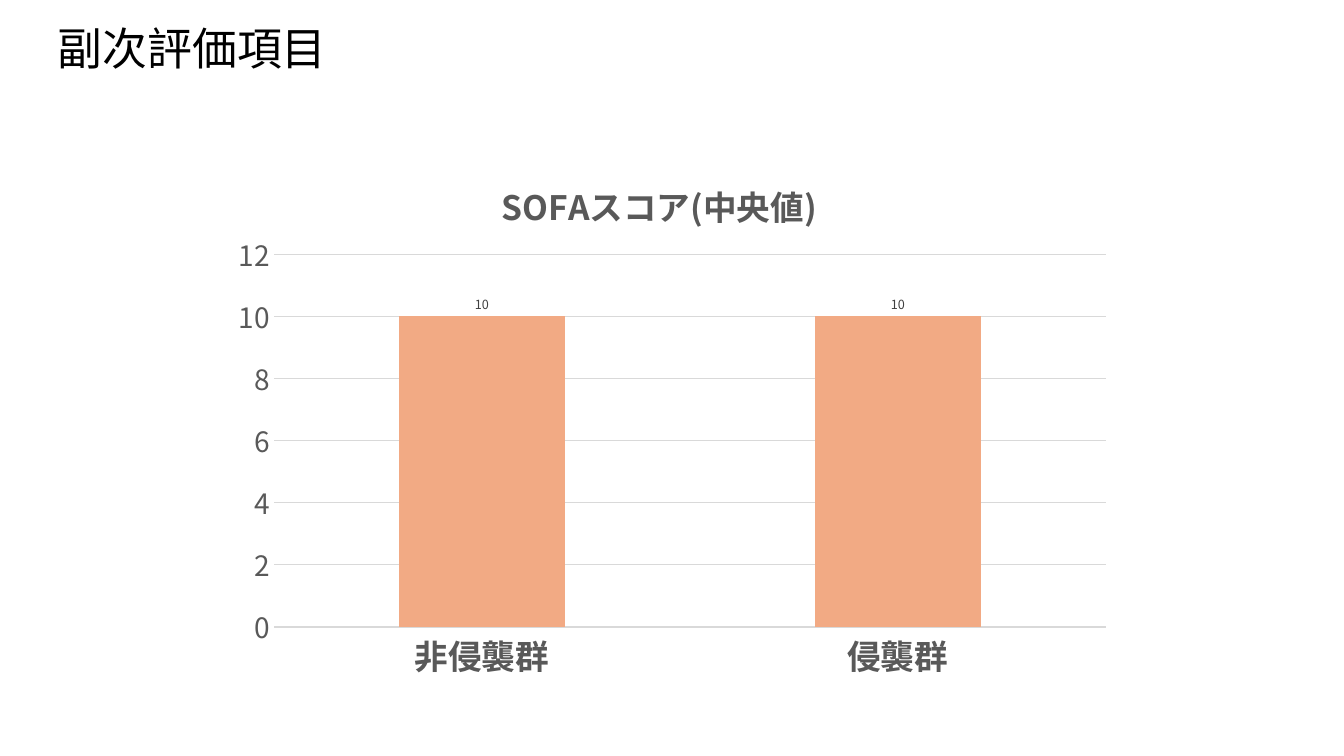
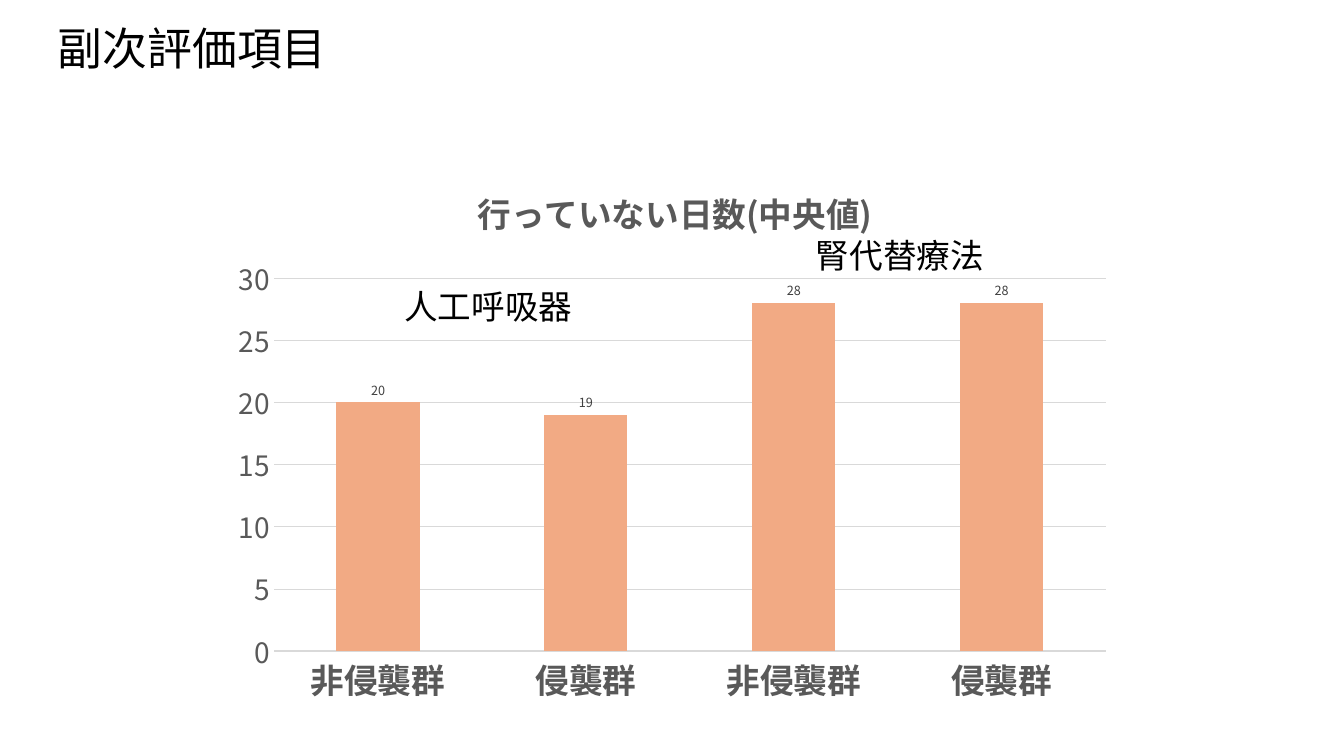
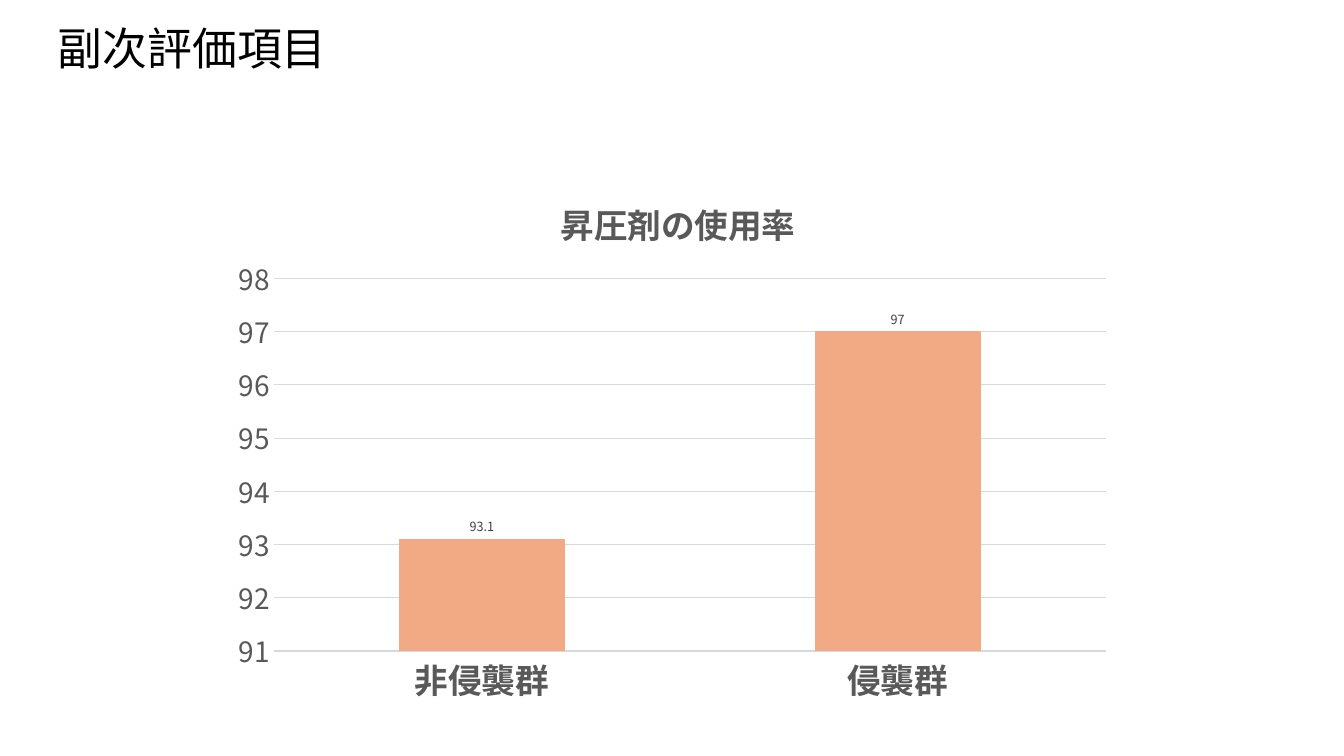
from dataclasses import dataclass

import pptx
import pptx.chart.data
import pptx.dml.color
import pptx.enum.chart
import pptx.enum.text
import pptx.oxml
import pptx.oxml.ns
import pptx.util

EMU_PER_PX = 9525
SLIDE_W, SLIDE_H = 1280, 720
HEADING_H = 91
HEADING_INDENT = 55
TEXT_INSET = 10
# Inner plot area shared by every chart; only its top varies
PLOT_LEFT, PLOT_W, PLOT_H = 261, 798, 355


@dataclass(frozen=True)
class Theme:
    font: str = "Noto Sans CJK JP"
    text: str = "000000"
    muted: str = "595959"
    value: str = "404040"
    bar: str = "F2AA84"
    grid: str = "D9D9D9"
    heading_size: int = 32
    label_size: int = 24
    scale_size: int = 20
    base_size: int = 10
    value_size: int = 9
    axis_line: float = 0.75
    grid_line: float = 0.25


THEME = Theme()


def px(length):
    return pptx.util.Emu(round(length * EMU_PER_PX))


def rgb(code):
    return pptx.dml.color.RGBColor.from_string(code)


def style_font(font, size, color, bold=False):
    font.size = pptx.util.Pt(size)
    font.bold = bold
    font.color.rgb = rgb(color)
    font.name = THEME.font
    # East Asian text takes its typeface from a:ea
    east_asian = pptx.oxml.parse_xml(
        f'<a:ea {pptx.oxml.ns.nsdecls("a")} typeface="{THEME.font}"/>')
    font._rPr.append(east_asian)


def style_line(line, color, width):
    line.color.rgb = rgb(color)
    line.width = pptx.util.Pt(width)


def add_text(slide, text, left, top, width, height, *, size, color=THEME.text,
             bold=False, indent=TEXT_INSET, wrap=True, middle=False):
    box = slide.shapes.add_textbox(px(left), px(top), px(width), px(height))
    frame = box.text_frame
    frame.word_wrap = wrap
    frame.margin_left = px(indent)
    anchors = pptx.enum.text.MSO_ANCHOR
    frame.vertical_anchor = anchors.MIDDLE if middle else anchors.TOP
    run = frame.paragraphs[0].add_run()
    run.text = text
    style_font(run.font, size, color, bold)


def place(element, x, y, w=None, h=None):
    """Give a chart part a fixed place, in fractions of the chart."""
    inner = '<c:layoutTarget val="inner"/>' if w else ""
    size = f'<c:w val="{w:.4f}"/><c:h val="{h:.4f}"/>' if w else ""
    layout = pptx.oxml.parse_xml(
        f'<c:layout {pptx.oxml.ns.nsdecls("c")}><c:manualLayout>{inner}'
        '<c:xMode val="edge"/><c:yMode val="edge"/>'
        f'<c:x val="{x:.4f}"/><c:y val="{y:.4f}"/>{size}'
        '</c:manualLayout></c:layout>')
    for old in element.findall(pptx.oxml.ns.qn("c:layout")):
        element.remove(old)
    text = element.find(pptx.oxml.ns.qn("c:tx"))
    element.insert(0 if text is None else 1, layout)


def style_axes(chart, scale):
    no_ticks = pptx.enum.chart.XL_TICK_MARK.NONE
    groups, values = chart.category_axis, chart.value_axis
    for axis in (groups, values):
        axis.major_tick_mark = axis.minor_tick_mark = no_ticks
    style_font(groups.tick_labels.font, THEME.label_size, THEME.muted, bold=True)
    style_line(groups.format.line, THEME.grid, THEME.axis_line)

    values.minimum_scale, values.maximum_scale, values.major_unit = scale
    style_font(values.tick_labels.font, THEME.scale_size, THEME.muted)
    values.format.line.fill.background()
    values.has_major_gridlines = True
    style_line(values.major_gridlines.format.line, THEME.grid, THEME.grid_line)


def add_bar_chart(slide, title, groups, results, *, area, title_at, plot_top, scale):
    left, top, width, height = area
    data = pptx.chart.data.CategoryChartData()
    data.categories = groups
    data.add_series("Series 1", results)
    chart = slide.shapes.add_chart(
        pptx.enum.chart.XL_CHART_TYPE.COLUMN_CLUSTERED,
        px(left), px(top), px(width), px(height), data).chart
    chart.has_legend = False
    style_font(chart.font, THEME.base_size, THEME.text)

    # Title
    chart.has_title = True
    caption = chart.chart_title.text_frame.paragraphs[0].add_run()
    caption.text = title
    style_font(caption.font, THEME.label_size, THEME.muted, bold=True)
    chart.chart_title.include_in_layout = False
    title_left, title_top = title_at
    place(chart.chart_title._element,
          (title_left - left) / width, (title_top - top) / height)

    # Bars and their values
    plot = chart.plots[0]
    plot.gap_width, plot.overlap = 150, -27
    plot.vary_by_categories = False
    bars = plot.series[0]
    bars.format.fill.solid()
    bars.format.fill.fore_color.rgb = rgb(THEME.bar)
    labels = bars.data_labels
    labels.show_value = True
    labels.position = pptx.enum.chart.XL_LABEL_POSITION.OUTSIDE_END
    style_font(labels.font, THEME.value_size, THEME.value)

    style_axes(chart, scale)
    place(chart._chartSpace.chart.plotArea,
          (PLOT_LEFT - left) / width, (plot_top - top) / height,
          (PLOT_W - 6) / width, PLOT_H / height)


def add_outcome_slide(deck):
    slide = deck.slides.add_slide(deck.slide_layouts[6])
    add_text(slide, "副次評価項目", 0, 0, SLIDE_W, HEADING_H,
             size=THEME.heading_size, indent=HEADING_INDENT, middle=True)
    return slide


def main():
    deck = pptx.Presentation()
    deck.slide_width, deck.slide_height = px(SLIDE_W), px(SLIDE_H)
    study_groups = ["非侵襲群", "侵襲群"]

    # SOFA score
    sofa = add_outcome_slide(deck)
    add_bar_chart(sofa, "SOFAスコア(中央値)", study_groups, [10, 10],
                  area=(209, 141, 861, 516), title_at=(472, 163),
                  plot_top=242, scale=(0, 12, 2))

    # Days free of each treatment
    free_days = add_outcome_slide(deck)
    add_bar_chart(free_days, "行っていない日数(中央値)", study_groups * 2,
                  [20, 19, 28, 28],
                  area=(210, 164, 859, 516), title_at=(449, 170),
                  plot_top=265, scale=(0, 30, 5))
    for treatment, left, top in (("人工呼吸器", 375, 268), ("腎代替療法", 767, 219)):
        add_text(free_days, treatment, left, top, 180, 48,
                 size=THEME.label_size, wrap=False)

    # Vasopressor use
    vasopressors = add_outcome_slide(deck)
    add_bar_chart(vasopressors, "昇圧剤の使用率", study_groups, [93.1, 97],
                  area=(210, 155, 859, 527), title_at=(528, 181),
                  plot_top=265, scale=(91, 98, 1))

    deck.save("out.pptx")


if __name__ == "__main__":
    main()
